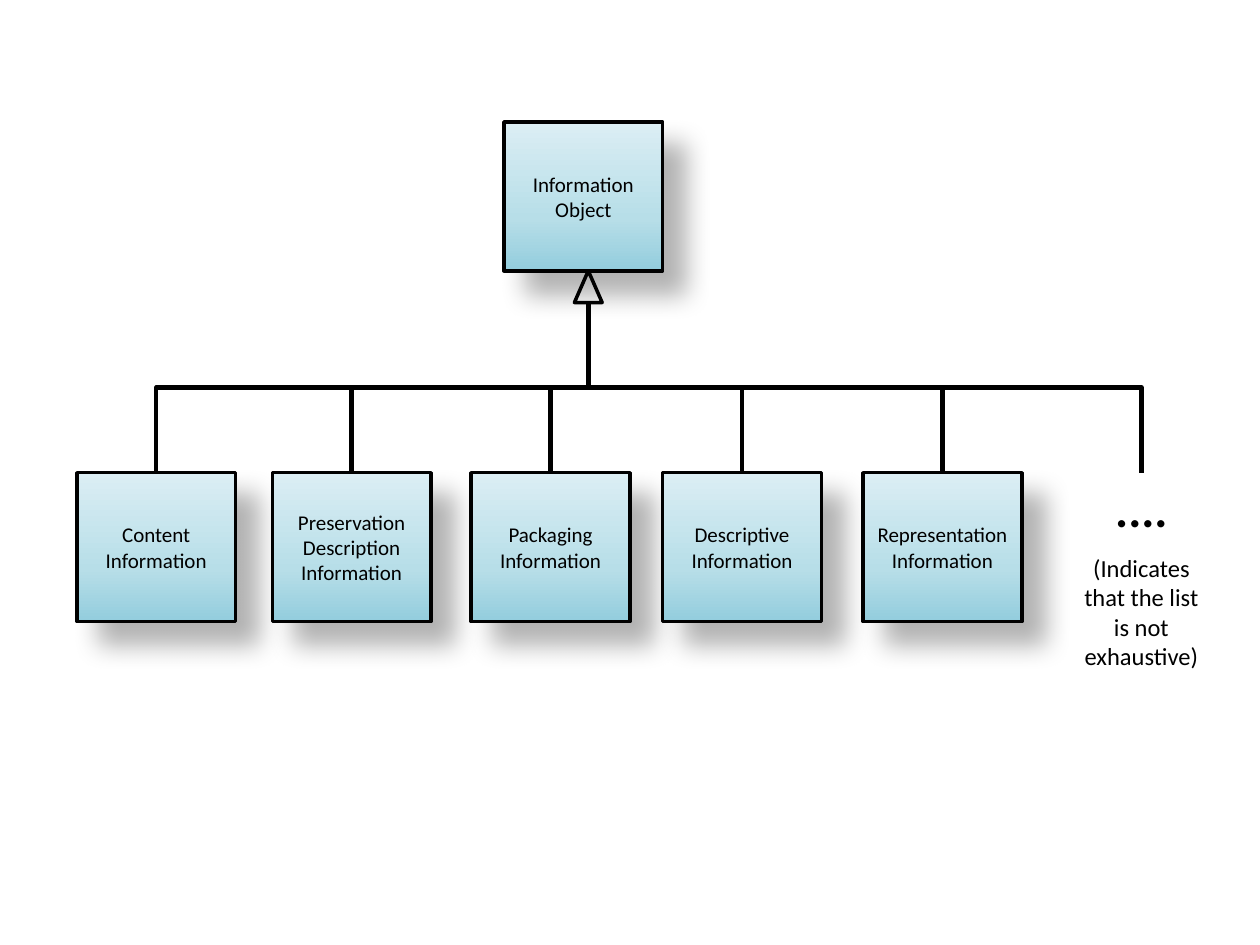
from lxml import etree
from pptx import Presentation
from pptx.dml.color import RGBColor
from pptx.enum.shapes import MSO_CONNECTOR, MSO_SHAPE
from pptx.enum.text import MSO_ANCHOR, PP_ALIGN
from pptx.oxml import parse_xml
from pptx.oxml.ns import nsdecls, qn
from pptx.util import Cm, Pt

ELBOW = MSO_CONNECTOR.ELBOW
RECT = MSO_SHAPE.RECTANGLE
TRIANGLE = MSO_SHAPE.ISOSCELES_TRIANGLE
CENTER = PP_ALIGN.CENTER
MIDDLE, TOP = MSO_ANCHOR.MIDDLE, MSO_ANCHOR.TOP

BLACK = RGBColor(0x00, 0x00, 0x00)
STOPS = [
    (0, RGBColor(0x93, 0xCD, 0xDD)),
    (35, RGBColor(0xB7, 0xDE, 0xE8)),
    (100, RGBColor(0xDB, 0xEE, 0xF4)),
]
FONT = "Calibri"

# All lengths are in centimetres.
BOX_W, BOX_H = 3.2, 3.0
ROOT_X, ROOT_Y = 10.16, 2.46
ROW_Y = 9.53
TIP_W, TIP_H = 0.56, 0.64
JOIN_X = 11.86
TIP_Y = ROOT_Y + BOX_H
JOIN_Y = TIP_Y + TIP_H
MORE_X = 21.41

KINDS = [
    (1.55, ["Content Information"]),
    (5.49, ["Preservation Description", "Information"]),
    (9.5, ["Packaging", "Information"]),
    (13.36, ["Descriptive", "Information"]),
    (17.4, ["Representation Information"]),
]


def write(shape, lines, size=12, bold=False, anchor=MIDDLE):
    frame = shape.text_frame
    frame.word_wrap = True
    frame.vertical_anchor = anchor
    frame.text = "\n".join(lines)
    for para in frame.paragraphs:
        para.alignment = CENTER
        font = para.font
        font.name, font.size, font.bold = FONT, Pt(size), bold
        font.color.rgb = BLACK


def stroke(shape, width):
    shape.line.color.rgb = BLACK
    shape.line.width = Pt(width)


def shade(shape):
    """Fill with the blue gradient, dark at the bottom."""
    fill = shape.fill
    fill.gradient()
    fill.gradient_angle = 90
    stops = shape._element.spPr.find(qn("a:gradFill")).find(qn("a:gsLst"))
    for stop in list(stops):
        stops.remove(stop)
    for place, color in STOPS:
        stop = etree.SubElement(stops, qn("a:gs"), pos=str(place * 1000))
        etree.SubElement(stop, qn("a:srgbClr"), val=str(color))


def cast(shape):
    """Add a soft shadow to the lower right."""
    shape._element.spPr.append(parse_xml(
        f'<a:effectLst {nsdecls("a")}>'
        f'<a:outerShdw blurRad="{Pt(15)}" dist="{Pt(18)}" dir="2700000" '
        'algn="ctr" rotWithShape="0"><a:srgbClr val="000000">'
        '<a:alpha val="30000"/></a:srgbClr></a:outerShdw></a:effectLst>'))


def add_box(slide, x, y, lines):
    box = slide.shapes.add_shape(RECT, Cm(x), Cm(y), Cm(BOX_W), Cm(BOX_H))
    shade(box)
    stroke(box, 2)
    cast(box)
    write(box, lines)


def add_tip(slide):
    tip = slide.shapes.add_shape(
        TRIANGLE, Cm(JOIN_X - TIP_W / 2), Cm(TIP_Y), Cm(TIP_W), Cm(TIP_H))
    tip.shadow.inherit = False
    tip.fill.background()
    stroke(tip, 2)


def add_note(slide, y, height, text, **style):
    note = slide.shapes.add_textbox(
        Cm(MORE_X), Cm(y), Cm(BOX_W), Cm(height))
    write(note, [text], anchor=TOP, **style)


def add_branch(slide, x):
    """Run an elbow up from the row at x to the join, as a turned connector."""
    mid_x, mid_y = (x + JOIN_X) / 2, (ROW_Y + JOIN_Y) / 2
    run = abs(JOIN_X - x) / 2
    rise = (ROW_Y - JOIN_Y) / 2
    side = 1 if x < JOIN_X else -1
    line = slide.shapes.add_connector(
        ELBOW, Cm(mid_x + side * rise), Cm(mid_y + run),
        Cm(mid_x - side * rise), Cm(mid_y - run))
    props = line._element.spPr
    turn = 90 if side > 0 else 270
    props.find(qn("a:xfrm")).set("rot", str(turn * 60000))
    stroke(line, 2.5)
    etree.SubElement(props, qn("a:effectLst"))


def main():
    deck = Presentation()
    deck.slide_width, deck.slide_height = Cm(25.4), Cm(19.05)
    slide = deck.slides.add_slide(deck.slide_layouts[6])

    add_box(slide, ROOT_X, ROOT_Y, ["Information", "Object"])
    add_tip(slide)
    for x, lines in KINDS:
        add_box(slide, x, ROW_Y, lines)
    add_note(slide, ROW_Y, 1.45, "....", size=28, bold=True)
    for x in [x for x, _ in KINDS] + [MORE_X]:
        add_branch(slide, x + BOX_W / 2)
    add_note(slide, 11.02, 2.64,
             "(Indicates that the list is not exhaustive)", size=14)
    deck.save("out.pptx")


if __name__ == "__main__":
    main()
